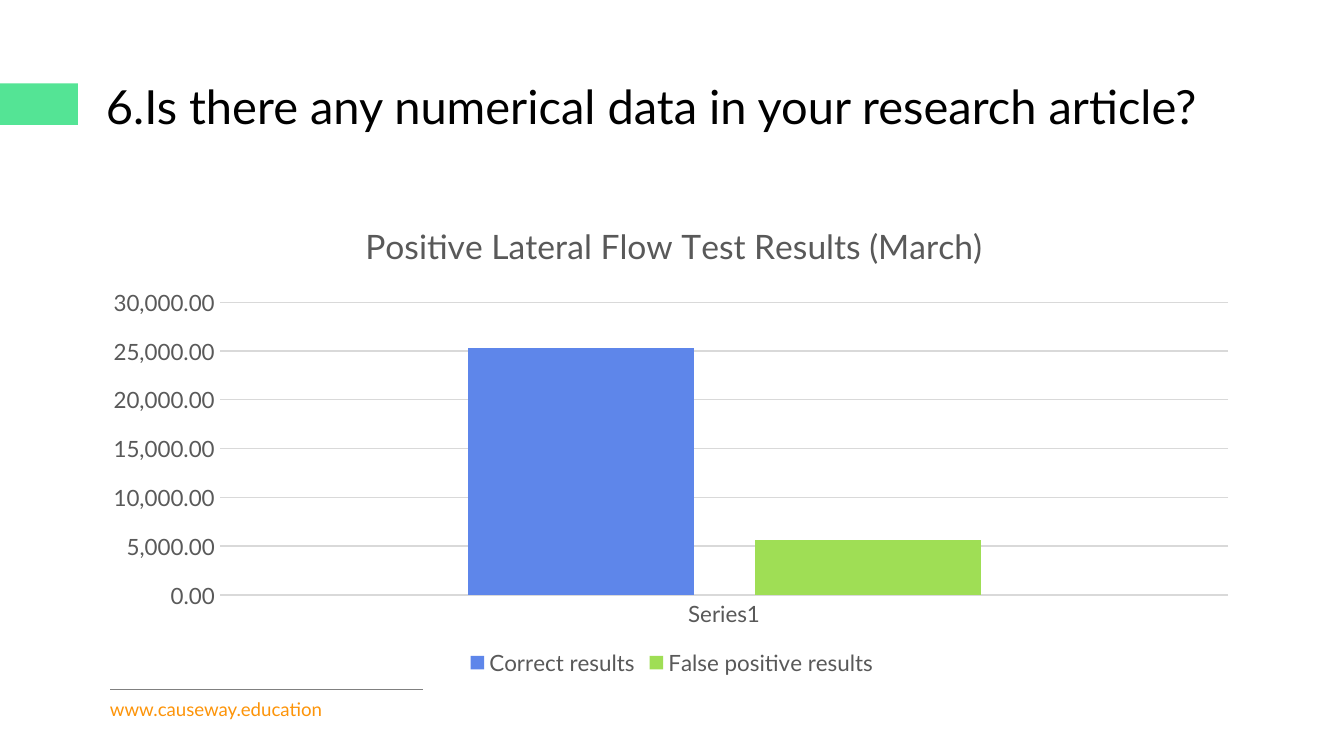
from dataclasses import dataclass

from lxml import etree
from pptx import Presentation
from pptx.chart.data import CategoryChartData
from pptx.dml.color import RGBColor
from pptx.enum.chart import XL_CHART_TYPE, XL_LEGEND_POSITION, XL_TICK_MARK
from pptx.enum.shapes import MSO_CONNECTOR, MSO_SHAPE
from pptx.enum.text import MSO_ANCHOR
from pptx.oxml import parse_xml
from pptx.oxml.ns import nsdecls, qn
from pptx.util import Inches, Pt

COLUMN = XL_CHART_TYPE.COLUMN_CLUSTERED
BOTTOM = XL_LEGEND_POSITION.BOTTOM
NO_TICK = XL_TICK_MARK.NONE
STRAIGHT = MSO_CONNECTOR.STRAIGHT
RECTANGLE = MSO_SHAPE.RECTANGLE
TOP = MSO_ANCHOR.TOP
MIDDLE = MSO_ANCHOR.MIDDLE
FONT = "Lato"
GREY = "595959"
GRID = "D9D9D9"
SLIDE_WIDTH = 10


@dataclass
class Label:
    text: str
    left: float
    top: float
    width: float
    height: float
    size: float
    color: str
    anchor: MSO_ANCHOR = TOP
    spacing: float = 1.0


@dataclass
class Result:
    name: str
    count: int
    color: str


LABELS = [
    Label("www.causeway.education", 0.72, 5.14, 5, 0.27, 10, "FD9409"),
    Label("6.Is there any numerical data in your research article?",
          0.69, 0.37, 8.62, 0.89, 25.2, "000000", MIDDLE, 0.9),
]
RESULTS = [
    Result("Correct results", 25300, "5E86EA"),
    Result("False positive results", 5600, "9FDE55"),
]


def rgb(value: str) -> RGBColor:
    return RGBColor.from_string(value)


def style_font(font, size: float, color: str) -> None:
    font.name = FONT
    font.size = Pt(size)
    font.bold = False
    font.color.rgb = rgb(color)


def style_line(line, color: str, width: float) -> None:
    line.color.rgb = rgb(color)
    line.width = Pt(width)


def add_label(page, label: Label) -> None:
    box = page.shapes.add_textbox(Inches(label.left), Inches(label.top),
                                  Inches(label.width), Inches(label.height))
    frame = box.text_frame
    frame.word_wrap = True
    frame.vertical_anchor = label.anchor
    frame.text = label.text
    para = frame.paragraphs[0]
    para.line_spacing = label.spacing
    style_font(para.runs[0].font, label.size, label.color)


def add_accent(page) -> None:
    accent = page.shapes.add_shape(RECTANGLE, 0, Inches(0.62), Inches(0.58), Inches(0.31))
    accent.shadow.inherit = False
    accent.fill.solid()
    accent.fill.fore_color.rgb = rgb("54E495")
    accent.line.fill.background()


def add_footer_rule(page) -> None:
    rule = page.shapes.add_connector(STRAIGHT, Inches(0.82), Inches(5.13),
                                     Inches(3.15), Inches(5.13))
    style_line(rule.line, "808080", 0.5)
    properties = rule.element.find(qn("p:spPr"))
    etree.SubElement(properties, qn("a:effectLst"))


def set_layout(parent, index: int, target: str = "", **place: float) -> None:
    for old in parent.findall(qn("c:layout")):
        parent.remove(old)
    inner = f'<c:layoutTarget val="{target}"/>' if target else ""
    modes = "".join(f'<c:{key}Mode val="edge"/>' for key in "xy")
    values = "".join(f'<c:{key} val="{value}"/>' for key, value in place.items())
    parent.insert(index, parse_xml(
        f'<c:layout {nsdecls("c")}><c:manualLayout>{inner}{modes}{values}'
        "</c:manualLayout></c:layout>"))


def add_results_chart(page, results: list[Result]) -> None:
    data = CategoryChartData(number_format="#,##0.00")
    data.categories = ["Series1"]
    for result in results:
        data.add_series(result.name, [result.count])
    chart = page.shapes.add_chart(COLUMN, Inches(0.69), Inches(1.5),
                                  Inches(8.62), Inches(3.57), data).chart
    style_font(chart.font, 12, GREY)

    chart.has_title = True
    title = chart.chart_title
    title.text_frame.text = "Positive Lateral Flow Test Results (March)"
    style_font(title.text_frame.paragraphs[0].runs[0].font, 18, GREY)
    title.include_in_layout = False
    set_layout(title.element, 1, x=0.23, y=0.03)
    plot_area = chart.element.find(f".//{qn('c:plotArea')}")
    set_layout(plot_area, 0, "inner", x=0.11, y=0.21, w=0.87, h=0.61)

    chart.has_legend = True
    chart.legend.position = BOTTOM
    chart.legend.include_in_layout = False
    style_font(chart.legend.font, 12, GREY)

    for axis in (chart.category_axis, chart.value_axis):
        axis.major_tick_mark = NO_TICK
        axis.minor_tick_mark = NO_TICK
        style_font(axis.tick_labels.font, 12, GREY)
    style_line(chart.category_axis.format.line, GRID, 0.75)
    values = chart.value_axis
    values.minimum_scale = 0
    values.maximum_scale = 30000
    values.major_unit = 5000
    values.format.line.fill.background()
    values.has_major_gridlines = True
    style_line(values.major_gridlines.format.line, GRID, 0.75)
    values.tick_labels.number_format = "#,##0.00"
    values.tick_labels.number_format_is_linked = False

    plot = chart.plots[0]
    plot.gap_width = 219
    plot.overlap = -27
    plot.vary_by_categories = False
    for series, result in zip(plot.series, results):
        series.format.fill.solid()
        series.format.fill.fore_color.rgb = rgb(result.color)


def main() -> None:
    deck = Presentation()
    deck.slide_width = Inches(SLIDE_WIDTH)
    deck.slide_height = Inches(SLIDE_WIDTH * 9 / 16)
    page = deck.slides.add_slide(deck.slide_layouts[6])
    add_accent(page)
    add_footer_rule(page)
    for label in LABELS:
        add_label(page, label)
    add_results_chart(page, RESULTS)
    deck.save("out.pptx")


if __name__ == "__main__":
    main()
